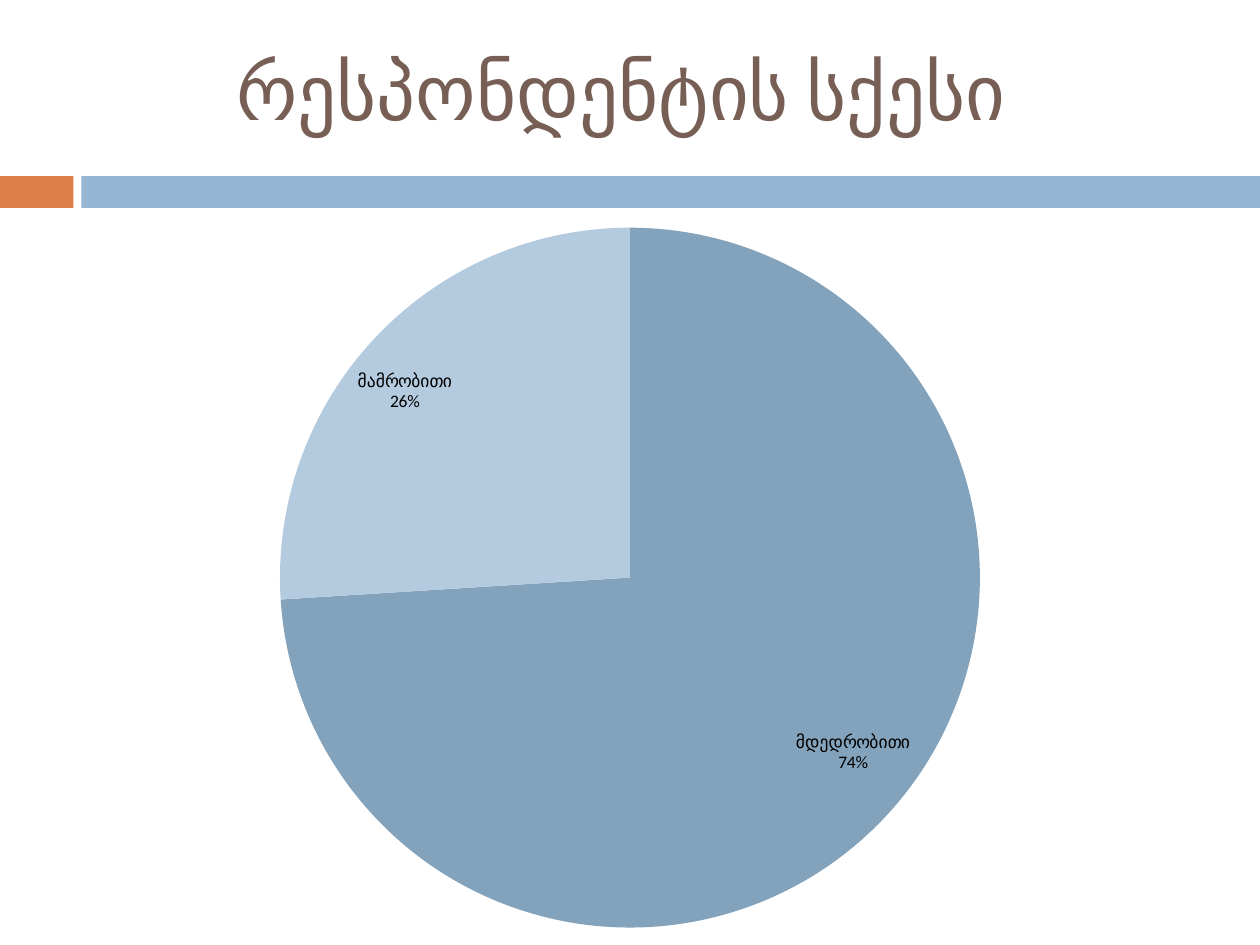
from pptx import Presentation
from pptx.chart import data
from pptx.dml import color
from pptx.enum import chart as charts, shapes, text
from pptx.oxml import parse_xml
from pptx.oxml import ns
from pptx.util import Cm, Pt

theme = {
    "font": "Calibri",
    "title_size": Pt(44),
    "label_size": Pt(10),
    "title": color.RGBColor.from_string("775F55"),
    "label": color.RGBColor.from_string("000000"),
    "accent": color.RGBColor.from_string("DD8047"),
    "band": color.RGBColor.from_string("94B6D2"),
    "slices": [color.RGBColor.from_string(value) for value in ("83A2BB", "B4CADE")],
}


def apply_format(target, values):
    for name, value in values.items():
        setattr(target, name, value)


def paint(fill, rgb):
    fill.solid()
    fill.fore_color.rgb = rgb


presentation = Presentation()
apply_format(presentation, {"slide_width": Cm(25.4), "slide_height": Cm(19.05)})
slide = presentation.slides.add_slide(presentation.slide_layouts[5])

for left, width, rgb in (
    (0, 1.48, theme["accent"]),
    (1.64, 23.76, theme["band"]),
):
    bar = slide.shapes.add_shape(
        shapes.MSO_SHAPE.RECTANGLE, Cm(left), Cm(3.55), Cm(width), Cm(0.64)
    )
    bar.shadow.inherit = False
    paint(bar.fill, rgb)
    bar.line.fill.background()

title = slide.shapes.title
apply_format(title, {"left": Cm(0), "top": Cm(0), "width": Cm(25.4), "height": Cm(3.6)})
title.text_frame.text = "რესპონდენტის სქესი "
apply_format(
    title.text_frame,
    {"vertical_anchor": text.MSO_ANCHOR.MIDDLE, "word_wrap": True},
)
paragraph = title.text_frame.paragraphs[0]
paragraph.alignment = text.PP_ALIGN.CENTER
title_font = paragraph.runs[0].font
apply_format(title_font, {"name": theme["font"], "size": theme["title_size"]})
title_font.color.rgb = theme["title"]

gender_data = data.CategoryChartData(number_format="0")
gender_data.categories = ["მდედრობითი", "მამრობითი"]
gender_data.add_series("Series 1", (74, 26))
gender_chart = slide.shapes.add_chart(
    charts.XL_CHART_TYPE.PIE, Cm(0), Cm(4.24), Cm(25.4), Cm(14.81), gender_data
).chart
apply_format(gender_chart, {"has_legend": False, "has_title": False})
apply_format(gender_chart.font, {"name": theme["font"], "size": theme["label_size"]})
gender_chart.font.color.rgb = theme["label"]

plot = gender_chart.plots[0]
apply_format(plot, {"vary_by_categories": True, "has_data_labels": True})
labels = plot.data_labels
apply_format(
    labels,
    {
        "show_category_name": True,
        "show_percentage": True,
        "show_value": False,
        "number_format": "0%",
        "number_format_is_linked": False,
        "position": charts.XL_LABEL_POSITION.BEST_FIT,
    },
)
apply_format(labels.font, {"name": theme["font"], "size": theme["label_size"]})
labels.font.color.rgb = theme["label"]
separator = parse_xml(f"<c:separator {ns.nsdecls('c')}>\n</c:separator>")
labels._element.find(ns.qn("c:showBubbleSize")).addnext(separator)

for index, rgb in enumerate(theme["slices"]):
    slice_format = plot.series[0].points[index].format
    paint(slice_format.fill, rgb)
    slice_format.line.fill.background()

presentation.save("out.pptx")
